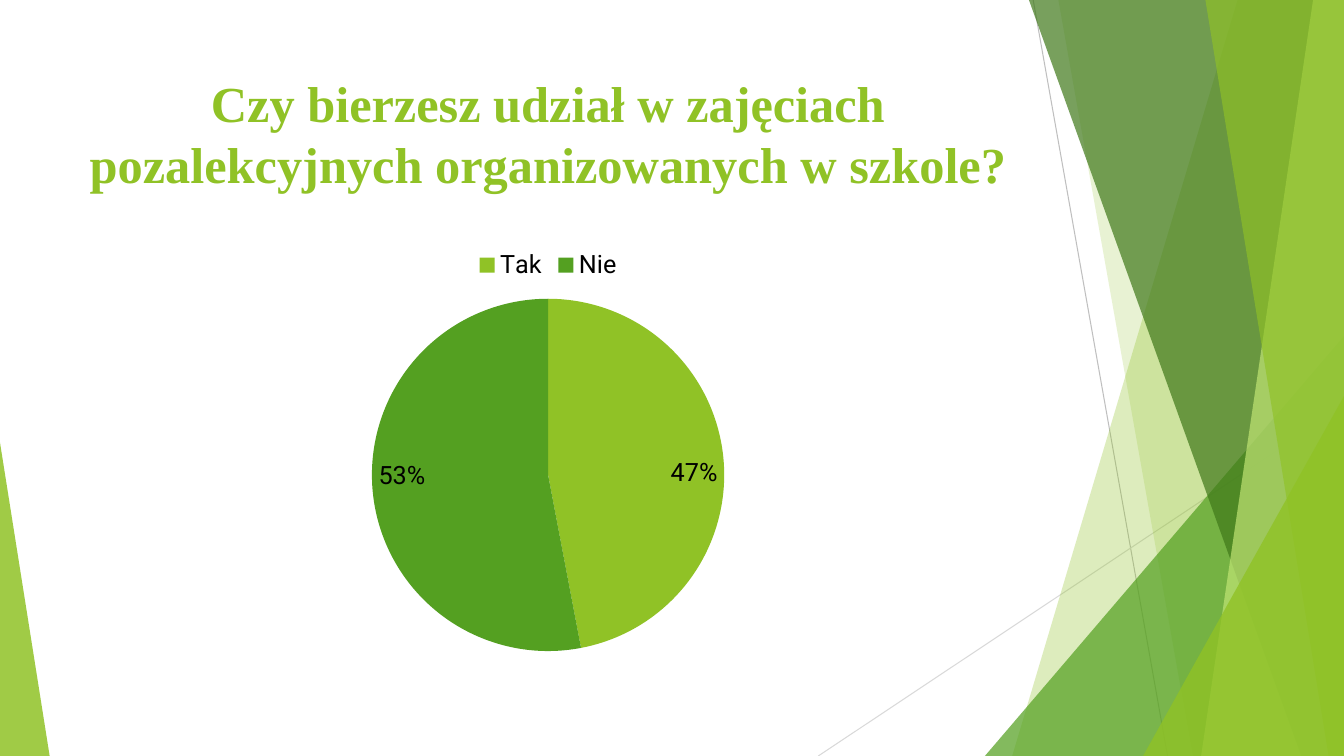
import pptx
import pptx.chart.data
import pptx.dml.color
import pptx.enum.chart
import pptx.enum.shapes
import pptx.enum.text
import pptx.oxml.ns
import pptx.util
from lxml import etree

Pt = pptx.util.Pt
RGBColor = pptx.dml.color.RGBColor

LIME = RGBColor(0x90, 0xC2, 0x26)
GREEN = RGBColor(0x54, 0xA0, 0x21)
DARK_GREEN = RGBColor(0x3F, 0x78, 0x19)
PALE_LIME = RGBColor(0xC0, 0xE4, 0x74)
GREY = RGBColor(0xBF, 0xBF, 0xBF)
LIGHT_GREY = RGBColor(0xD9, 0xD9, 0xD9)
BLACK = RGBColor(0, 0, 0)

WIDTH, HEIGHT = 960, 540

presentation = pptx.Presentation()
presentation.slide_width = Pt(WIDTH)
presentation.slide_height = Pt(HEIGHT)
slide = presentation.slides.add_slide(presentation.slide_layouts[6])


def paint(facet, color, opacity):
    """Fill a facet with a see-through colour, without outline or shadow."""
    facet.shadow.inherit = False
    facet.line.fill.background()
    facet.fill.solid()
    facet.fill.fore_color.rgb = color
    color_xml = facet.fill._xPr.find(".//" + pptx.oxml.ns.qn("a:srgbClr"))
    etree.SubElement(color_xml, pptx.oxml.ns.qn("a:alpha"), val=str(opacity * 1000))


def add_triangle(left, top, width, apex, color, opacity):
    """Add a triangle standing on the bottom edge of the slide."""
    triangle = slide.shapes.add_shape(
        pptx.enum.shapes.MSO_SHAPE.ISOSCELES_TRIANGLE,
        Pt(left), Pt(top), Pt(width), Pt(HEIGHT - top))
    triangle.adjustments[0] = apex
    paint(triangle, color, opacity)


# Thin lines behind the facets
for x1, y1, x2, y2, color in [
    (738, 0, 834, HEIGHT, GREY),
    (WIDTH, 290, 584.5, HEIGHT, LIGHT_GREY),
]:
    ray = slide.shapes.add_connector(
        pptx.enum.shapes.MSO_CONNECTOR.STRAIGHT, Pt(x1), Pt(y1), Pt(x2), Pt(y2))
    ray.line.color.rgb = color
    ray.line.width = Pt(0.75)
    etree.SubElement(ray._element.spPr, pptx.oxml.ns.qn("a:effectLst"))

# Facets: full-height bands reach from a slanted left side to the right edge
for top_x, bottom_x, color, opacity in [
    (884, 723, LIME, 30),
    (756, 852, LIME, 20),
    (735, 929.5, DARK_GREEN, 70),
    (938, 858, PALE_LIME, 70),
    (861, 949, LIME, 65),
]:
    if color == DARK_GREEN:
        add_triangle(703.5, 240, 256.5, 1, GREEN, 72)
    outline = slide.shapes.build_freeform(Pt(top_x), 0)
    outline.add_line_segments(
        [(Pt(WIDTH), 0), (Pt(WIDTH), Pt(HEIGHT)), (Pt(bottom_x), Pt(HEIGHT))])
    paint(outline.convert_to_shape(), color, opacity)

add_triangle(816.5, 283, 143.5, 1, LIME, 80)
add_triangle(0, 316, 35.5, 0, LIME, 85)

# Title
title = slide.shapes.add_textbox(Pt(53), Pt(48), Pt(677), Pt(104)).text_frame
title.word_wrap = True
title.vertical_anchor = pptx.enum.text.MSO_ANCHOR.TOP
question = title.paragraphs[0]
question.text = "Czy bierzesz udział w zajęciach pozalekcyjnych organizowanych w szkole?"
question.alignment = pptx.enum.text.PP_ALIGN.CENTER
question.font.name = "Times New Roman"
question.font.size = Pt(36)
question.font.bold = True
question.font.color.rgb = LIME

# Pie chart of the answers
answers = pptx.chart.data.CategoryChartData()
answers.categories = ["Tak", "Nie"]
answers.add_series("Series 1", [47, 53])
chart = slide.shapes.add_chart(
    pptx.enum.chart.XL_CHART_TYPE.PIE, Pt(53), Pt(170), Pt(677), Pt(305), answers).chart
chart.has_title = False
chart.font.name = "Roboto"
chart.font.size = Pt(18)
chart.font.color.rgb = BLACK
chart.has_legend = True
chart.legend.position = pptx.enum.chart.XL_LEGEND_POSITION.TOP
chart.legend.include_in_layout = False

pie = chart.plots[0]
pie.vary_by_categories = True
for index, color in enumerate([LIME, GREEN]):
    slice_fill = pie.series[0].points[index].format.fill
    slice_fill.solid()
    slice_fill.fore_color.rgb = color

pie.has_data_labels = True
percentages = pie.data_labels
percentages.show_percentage = True
percentages.show_value = False
percentages.number_format = "0%"
percentages.number_format_is_linked = False
percentages.position = pptx.enum.chart.XL_LABEL_POSITION.INSIDE_END

presentation.save("out.pptx")
